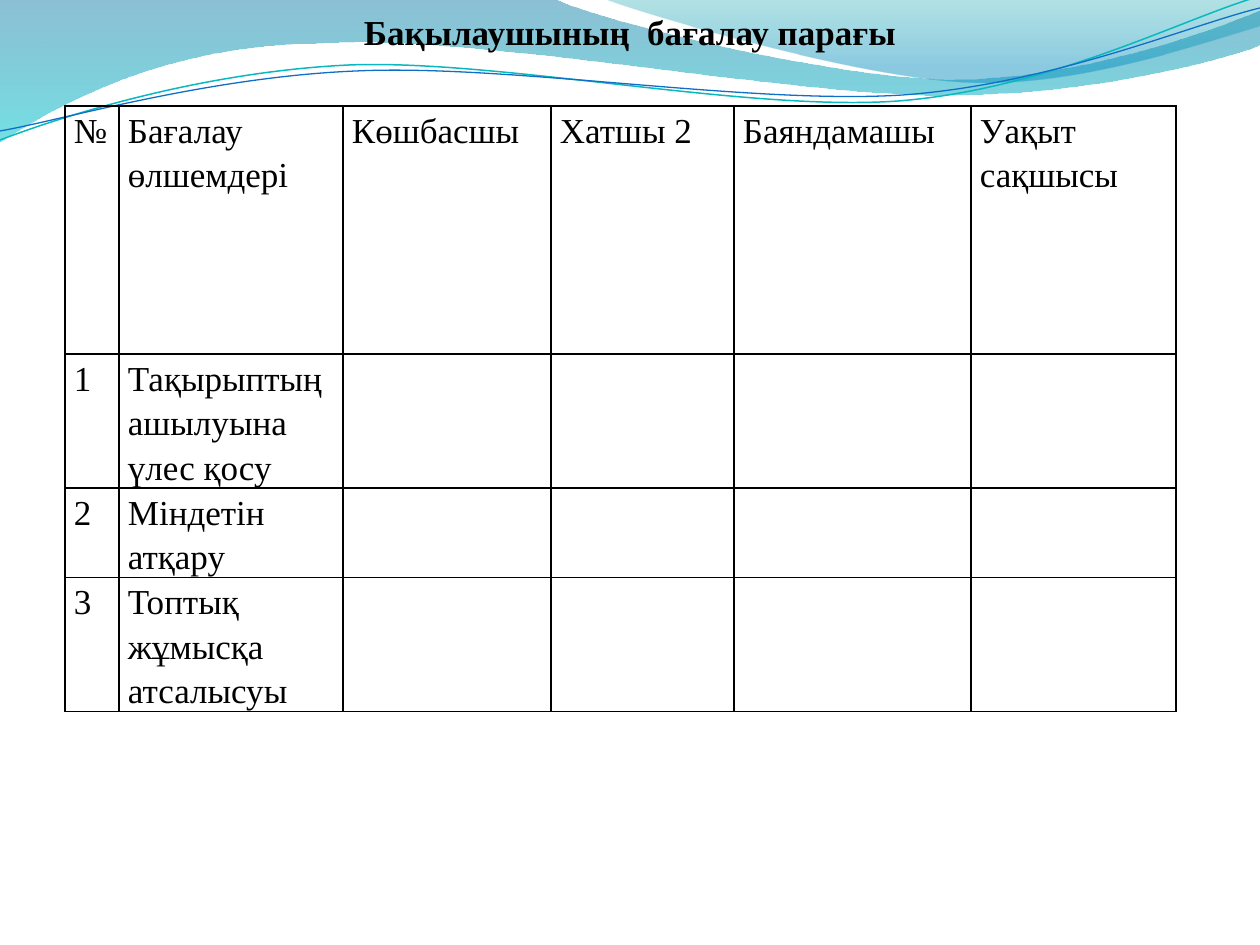
from lxml import etree
from pptx import Presentation
from pptx.dml.color import RGBColor
from pptx.enum.text import MSO_ANCHOR, PP_ALIGN
from pptx.oxml.ns import qn
from pptx.util import Pt

PX = 914400 / 126
MIDDLE = MSO_ANCHOR.MIDDLE
CENTER = PP_ALIGN.CENTER
FONT = "Times New Roman"


def color(value):
    return RGBColor.from_string(value)


def add_wave(shapes, start, segments, closed):
    anchors = [start] + [segment[-2:] for segment in segments]
    points = [(round(x * PX), round(y * PX)) for x, y in anchors]
    builder = shapes.build_freeform(*points[0])
    builder.add_line_segments(points[1:], close=closed)
    wave = builder.convert_to_shape()
    wave.shadow.inherit = False
    lines = list(wave._element.iter(qn("a:lnTo")))
    for line, segment in zip(lines, segments):
        if len(segment) == 6:
            curve = etree.Element(qn("a:cubicBezTo"))
            for x, y in zip(segment[::2], segment[1::2]):
                etree.SubElement(curve, qn("a:pt"), x=str(round(x * PX) - wave.left),
                                 y=str(round(y * PX) - wave.top))
            line.getparent().replace(line, curve)
    return wave


presentation = Presentation()
presentation.slide_width = round(1260 * PX)
presentation.slide_height = round(945 * PX)
slide = presentation.slides.add_slide(presentation.slide_layouts[5])
shapes = slide.shapes

filled_waves = [
    ((0, -1),
     [(554, -1), (600, 21, 837, 79, 955, 79), (1075, 79, 1207, 33, 1260, 11),
      (1261, 45), (1239, 55, 1096, 96, 940, 95), (784, 95, 481, 35, 324, 43),
      (163, 44, 58, 105, -1, 142)],
     [(0, "0074A1", 45), (1, "00C6CF", 55)]),
    ((604, -1),
     [(641, 14, 859, 78, 969, 82), (1079, 87, 1211, 40, 1260, 26), (1260, 0)],
     [(0, "00A1A9", 30), (0.8, "008BBF", 45)]),
]
for start, segments, stops in filled_waves:
    wave = add_wave(shapes, start, segments, True)
    wave.line.fill.background()
    wave.fill.gradient()
    wave.fill.gradient_angle = 270
    for stop, (position, hex_color, opacity) in zip(wave.fill.gradient_stops, stops):
        stop.position = position
        stop.color.rgb = color(hex_color)
    for element, (position, hex_color, opacity) in zip(wave._element.iter(qn("a:gs")), stops):
        etree.SubElement(element[0], qn("a:alpha"), val=str(opacity * 1000))

wave_lines = [
    ((0, 140),
     [(60, 117, 199, 72, 349, 65), (498, 59, 747, 112, 898, 101),
      (1050, 89, 1182, 19, 1257, -3)], "0AB8BF", 0.85),
    ((0, 131),
     [(59, 121, 207, 77, 357, 71), (508, 64, 752, 105, 903, 95),
      (1053, 84, 1187, 26, 1260, 8)], "0F6FC6", 0.75),
]
for start, segments, hex_color, width in wave_lines:
    wave = add_wave(shapes, start, segments, False)
    wave.fill.background()
    wave.line.color.rgb = color(hex_color)
    wave.line.width = Pt(width)

rows = [
    ["№", "Бағалау өлшемдері", "Көшбасшы", "Хатшы 2", "Баяндамашы", "Уақыт сақшысы"],
    ["1", "Тақырыптың ашылуына үлес қосу", "", "", "", ""],
    ["2", "Міндетін атқару", "", "", "", ""],
    ["3", "Топтық жұмысқа атсалысуы", "", "", "", ""],
]
column_widths = [54, 224, 208, 183, 237, 205]
row_heights = [248, 79, 76, 87]
frame = shapes.add_table(len(rows), len(column_widths), round(65 * PX), round(106 * PX),
                         round(sum(column_widths) * PX), round(634 * PX))
table = frame.table
table.first_row = False
table.horz_banding = False
for column, width in zip(table.columns, column_widths):
    column.width = round(width * PX)
for row, height, texts in zip(table.rows, row_heights, rows):
    row.height = round(height * PX)
    for cell, text in zip(row.cells, texts):
        cell.margin_left = cell.margin_right = round(9 * PX)
        cell.margin_top = cell.margin_bottom = 0
        if text:
            paragraph = cell.text_frame.paragraphs[0]
            paragraph.line_spacing = 1.15
            paragraph.space_after = Pt(10)
            run = paragraph.add_run()
            run.text = text
            run.font.size = Pt(20)
            run.font.name = FONT
            run.font.color.rgb = color("000000")
        properties = cell._tc.get_or_add_tcPr()
        for side in ("a:lnL", "a:lnR", "a:lnT", "a:lnB"):
            border = etree.SubElement(properties, qn(side), w=str(Pt(1)))
            fill = etree.SubElement(border, qn("a:solidFill"))
            etree.SubElement(fill, qn("a:srgbClr"), val="000000")
        cell.fill.background()

title = shapes.title
title.left, title.top = round(349 * PX), round(4 * PX)
title.width, title.height = round(562 * PX), round(55 * PX)
text_frame = title.text_frame
text_frame.word_wrap = False
text_frame.vertical_anchor = MIDDLE
paragraph = text_frame.paragraphs[0]
paragraph.alignment = CENTER
run = paragraph.add_run()
run.text = "Бақылаушының  бағалау парағы"
run.font.size = Pt(20)
run.font.name = FONT
run.font.bold = True
run.font.color.rgb = color("000000")
shapes._spTree.append(title._element)

presentation.save("out.pptx")
